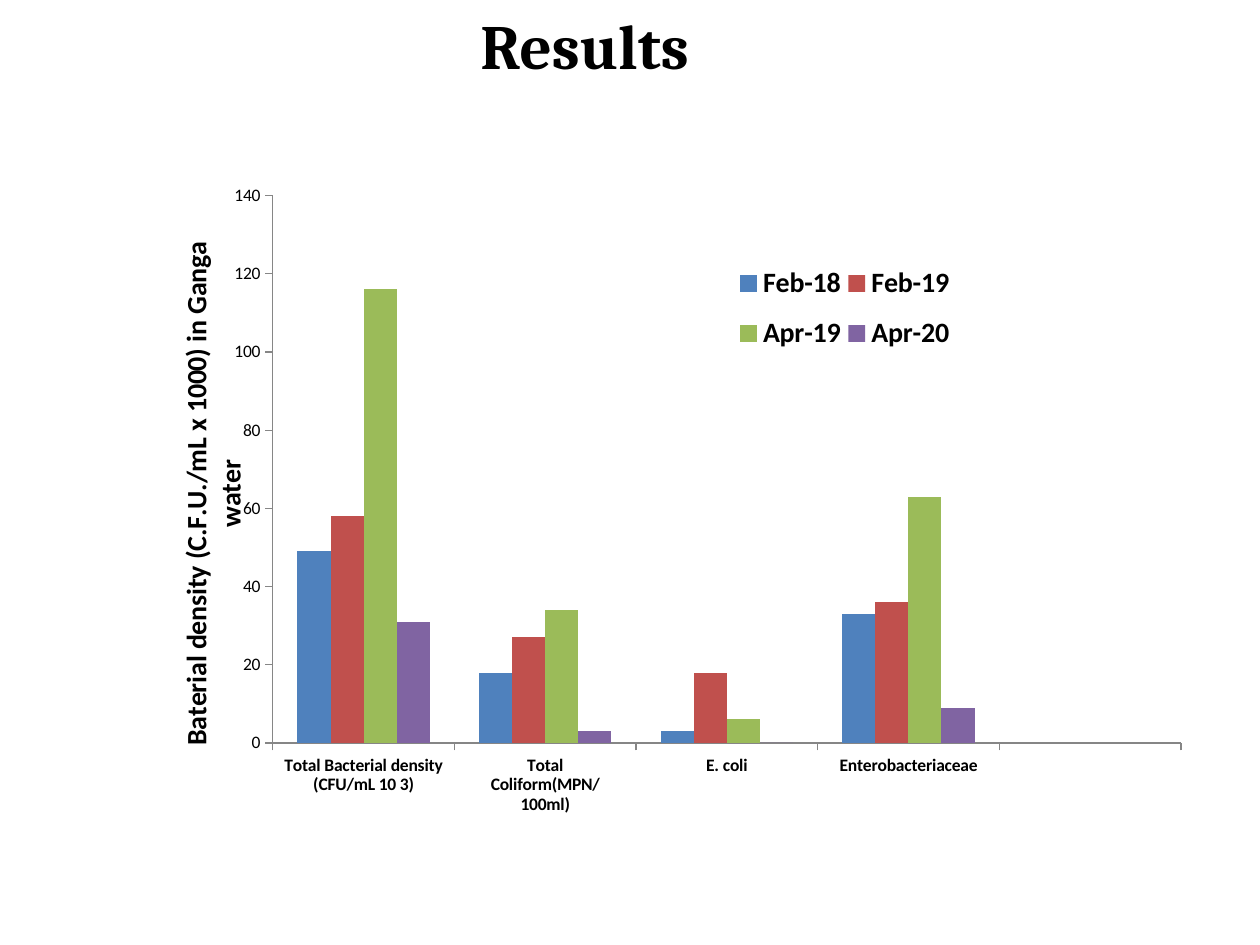
from lxml import etree
from pptx import Presentation
from pptx.chart import data as chart_data
from pptx.dml.color import RGBColor
from pptx.enum import chart as charts, text
from pptx.oxml import ns
from pptx.util import Inches, Pt

BLACK = RGBColor(0x00, 0x00, 0x00)
GRAY = RGBColor(0x86, 0x86, 0x86)
BLUE = RGBColor(0x4F, 0x81, 0xBD)
RED = RGBColor(0xC0, 0x50, 0x4D)
GREEN = RGBColor(0x9B, 0xBB, 0x59)
PURPLE = RGBColor(0x80, 0x64, 0xA2)

CATEGORIES = ["Total Bacterial density (CFU/mL 10 3)", "Total Coliform(MPN/100ml)",
              "E. coli", "Enterobacteriaceae", ""]
SERIES = [
    ("Feb-18", (49, 18, 3, 33, None), BLUE),
    ("Feb-19", (58, 27, 18, 36, None), RED),
    ("Apr-19", (116, 34, 6, 63, None), GREEN),
    ("Apr-20", (31, 3, 0, 9, None), PURPLE),
]


class SlideBuilder:
    """Adds consistently styled elements to one slide."""

    heading_font = "Cambria"
    body_font = "Calibri"

    def __init__(self, slide):
        self.slide = slide

    def style_font(self, font, size, bold=False, name=body_font):
        font.name, font.size, font.bold = name, Pt(size), bold
        font.color.rgb = BLACK

    def add_heading(self, wording, left, top, width, height):
        box = self.slide.shapes.add_textbox(*map(Inches, (left, top, width, height)))
        frame = box.text_frame
        frame.word_wrap = True
        frame.auto_size = text.MSO_AUTO_SIZE.SHAPE_TO_FIT_TEXT
        frame.text = wording
        paragraph = frame.paragraphs[0]
        paragraph.alignment = text.PP_ALIGN.CENTER
        self.style_font(paragraph.runs[0].font, 36, True, self.heading_font)

    def set_layout(self, parent, index, inner=False, **fractions):
        for old in parent.findall(ns.qn("c:layout")):
            parent.remove(old)
        layout = etree.Element(ns.qn("c:layout"))
        manual = etree.SubElement(layout, ns.qn("c:manualLayout"))
        settings = [("layoutTarget", "inner")] if inner else []
        settings += [("xMode", "edge"), ("yMode", "edge"), *fractions.items()]
        for tag, value in settings:
            etree.SubElement(manual, ns.qn(f"c:{tag}")).set("val", str(value))
        parent.insert(index, layout)

    def add_column_chart(self, categories, series_rows, axis_title, left, top, width, height):
        data = chart_data.CategoryChartData()
        data.categories = categories
        for name, values, _ in series_rows:
            data.add_series(name, values)
        frame = self.slide.shapes.add_chart(
            charts.XL_CHART_TYPE.COLUMN_CLUSTERED,
            *map(Inches, (left, top, width, height)), data)
        chart = frame.chart
        chart.has_title = False
        self.style_font(chart.font, 10)
        plot = chart.plots[0]
        plot.gap_width, plot.overlap, plot.vary_by_categories = 150, 0, False
        for series, (_, _, color) in zip(plot.series, series_rows):
            series.invert_if_negative = False
            series.format.fill.solid()
            series.format.fill.fore_color.rgb = color
        self.style_axes(chart, axis_title)
        self.style_legend(chart)
        plot_area = chart._chartSpace.chart.plotArea
        self.set_layout(plot_area, 0, True, x=0.15, y=0.03, w=0.81, h=0.8)

    def style_axes(self, chart, axis_title):
        for axis, bold in ((chart.category_axis, True), (chart.value_axis, False)):
            axis.has_major_gridlines = False
            axis.major_tick_mark = charts.XL_TICK_MARK.OUTSIDE
            axis.format.line.color.rgb = GRAY
            axis.format.line.width = Pt(0.75)
            self.style_font(axis.tick_labels.font, 10, bold)
        axis = chart.value_axis
        axis.minimum_scale, axis.maximum_scale, axis.major_unit = 0, 140, 20
        title = axis.axis_title
        title.text_frame.text = axis_title
        self.style_font(title.text_frame.paragraphs[0].runs[0].font, 16, True)
        self.set_layout(title._element, 1, x=0.06, y=0.09)

    def style_legend(self, chart):
        chart.has_legend = True
        legend = chart.legend
        legend.position = charts.XL_LEGEND_POSITION.RIGHT
        legend.include_in_layout = False
        self.style_font(legend.font, 16, True)
        self.set_layout(legend._element, 1, x=0.56, y=0.11, w=0.2, h=0.17)


def main():
    presentation = Presentation()
    presentation.slide_width, presentation.slide_height = Inches(10), Inches(7.5)
    builder = SlideBuilder(presentation.slides.add_slide(presentation.slide_layouts[6]))
    builder.add_column_chart(CATEGORIES, SERIES,
                             "Baterial density (C.F.U./mL x 1000) in Ganga water",
                             0.83, 1.39, 8.9, 5.43)
    builder.add_heading("Results", 2.87, 0, 3.54, 0.71)
    presentation.save("out.pptx")


if __name__ == "__main__":
    main()
